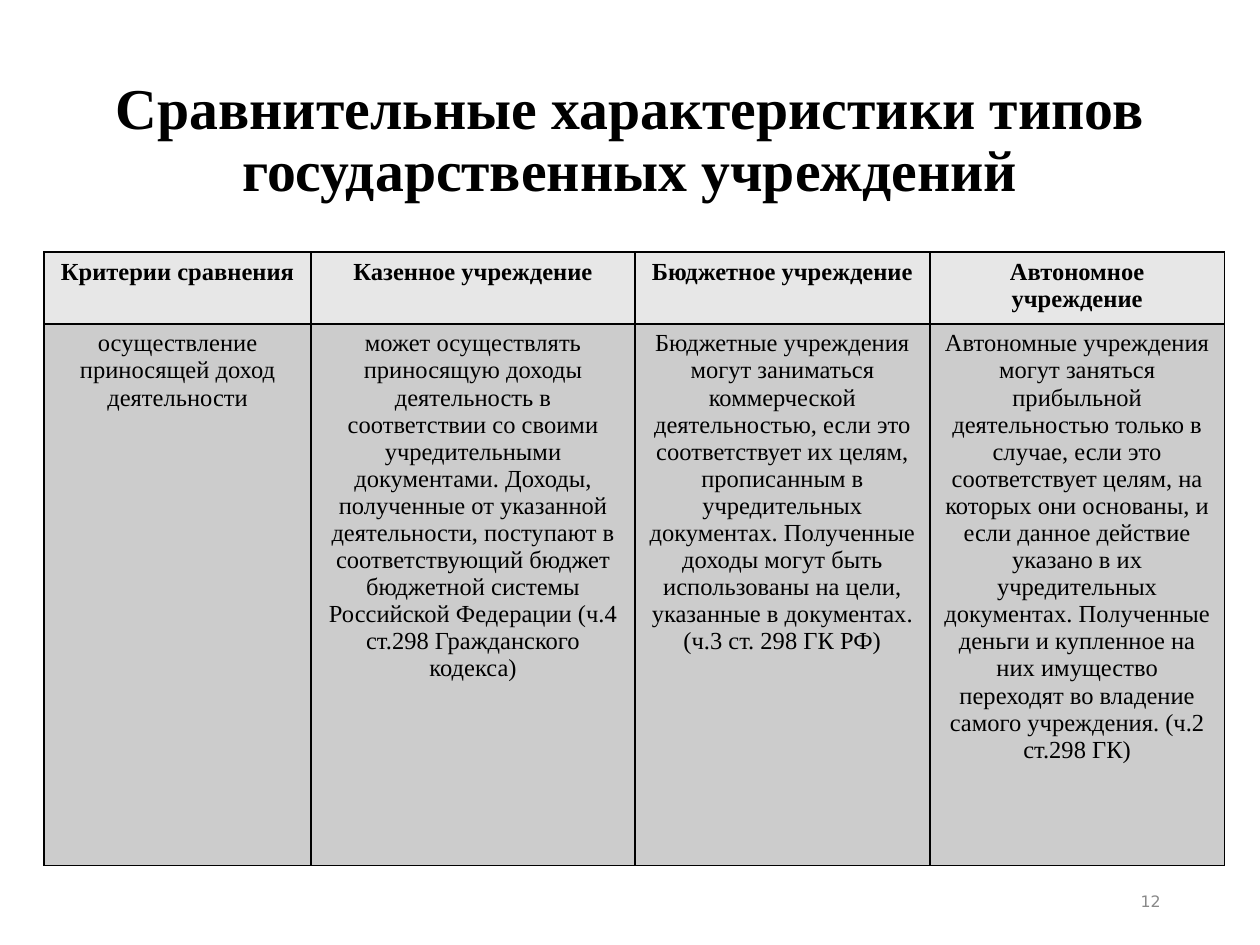
from lxml.etree import SubElement
from pptx import Presentation
from pptx.dml.color import RGBColor
from pptx.enum.text import MSO_ANCHOR, PP_ALIGN
from pptx.oxml.ns import qn
from pptx.util import Inches, Pt

SLIDE_WIDTH, SLIDE_HEIGHT = Inches(10), Inches(7.5)
SERIF, SANS = "Times New Roman", "DejaVu Sans"
BLACK, GREY, HEADER_FILL, BODY_FILL = "000000", "898989", "E7E7E7", "CCCCCC"
MARGIN_X, MARGIN_Y = Inches(0.1), Inches(0.05)
COLUMN_SHARES = [0.21, 0.26, 0.23, 0.23]
COLUMN_WIDTHS = [2.12, 2.57, 2.34, 2.34]
ROW_HEIGHTS = [0.57, 4.3]

TITLE = "Сравнительные характеристики типов государственных учреждений"
COMPARISON = [
    [
        "Критерии сравнения",
        "Казенное учреждение",
        "Бюджетное учреждение",
        "Автономное учреждение",
    ],
    [
        "осуществление приносящей доход деятельности",
        "может осуществлять приносящую доходы деятельность в соответствии "
        "со своими учредительными документами. Доходы, полученные от указанной "
        "деятельности, поступают в соответствующий бюджет бюджетной системы "
        "Российской Федерации (ч.4 ст.298 Гражданского кодекса)",
        "Бюджетные учреждения могут заниматься коммерческой деятельностью, "
        "если это соответствует их целям, прописанным в учредительных документах. "
        "Полученные доходы могут быть использованы на цели, указанные "
        "в документах. (ч.3 ст. 298 ГК РФ)",
        "Автономные учреждения могут заняться прибыльной деятельностью только "
        "в случае, если это соответствует целям, на которых они основаны, и если "
        "данное действие указано в их учредительных документах. Полученные деньги "
        "и купленное на них имущество переходят во владение самого учреждения. "
        "(ч.2 ст.298 ГК)",
    ],
]


def color(hex_string):
    """Return the colour for a hex string."""
    return RGBColor.from_string(hex_string)


def write(text_frame, text, size, font=SERIF, ink=BLACK, bold=False,
          align=PP_ALIGN.CENTER, line_spacing=None):
    """Write one run into the first paragraph of a text frame."""
    paragraph = text_frame.paragraphs[0]
    paragraph.alignment = align
    paragraph.line_spacing = line_spacing
    run = paragraph.add_run()
    run.text = text
    run.font.name = font
    run.font.size = Pt(size)
    run.font.bold = bold
    run.font.color.rgb = color(ink)


def add_text(slide, left, top, width, height, text, size, **style):
    """Add a vertically centred text box placed by inches."""
    shape = slide.shapes.add_textbox(*map(Inches, (left, top, width, height)))
    text_frame = shape.text_frame
    text_frame.word_wrap = True
    text_frame.vertical_anchor = MSO_ANCHOR.MIDDLE
    write(text_frame, text, size, **style)


def add_borders(cell, ink, width):
    """Draw a solid line on all four sides of a cell."""
    properties = cell._tc.get_or_add_tcPr()
    for position, side in enumerate(("a:lnL", "a:lnR", "a:lnT", "a:lnB")):
        line = SubElement(properties, qn(side), w=str(Pt(width)))
        fill = SubElement(line, qn("a:solidFill"))
        SubElement(fill, qn("a:srgbClr"), val=ink)
        properties.insert(position, line)


def fill_cell(cell, text, header):
    """Fill, frame and write one cell of the comparison."""
    cell.margin_left = cell.margin_right = MARGIN_X
    cell.margin_top = cell.margin_bottom = MARGIN_Y
    cell.fill.solid()
    cell.fill.fore_color.rgb = color(HEADER_FILL if header else BODY_FILL)
    add_borders(cell, BLACK, 1)
    write(cell.text_frame, text, 14, bold=header)


def add_comparison(slide, left, top):
    """Add the comparison table at a place in inches."""
    table = slide.shapes.add_table(
        len(ROW_HEIGHTS), len(COLUMN_WIDTHS), Inches(left), Inches(top),
        Inches(sum(COLUMN_WIDTHS)), Inches(sum(ROW_HEIGHTS))).table
    for column, width in zip(table.columns, COLUMN_WIDTHS):
        column.width = Inches(width)
    for row_index, (row, height) in enumerate(zip(table.rows, ROW_HEIGHTS)):
        row.height = Inches(height)
        for cell, text in zip(row.cells, COMPARISON[row_index]):
            fill_cell(cell, text, header=row_index == 0)


def main():
    """Build the slide and save it."""
    presentation = Presentation()
    presentation.slide_width = SLIDE_WIDTH
    presentation.slide_height = SLIDE_HEIGHT
    slide = presentation.slides.add_slide(presentation.slide_layouts[6])
    add_text(slide, 0.69, 0.4, 8.62, 1.45, TITLE, 33, bold=True, line_spacing=0.9)
    add_comparison(slide, 0.35, 2)
    add_text(slide, 7.06, 6.95, 2.25, 0.4, "12", 9, font=SANS, ink=GREY,
             align=PP_ALIGN.RIGHT)
    presentation.save("out.pptx")


if __name__ == "__main__":
    main()
